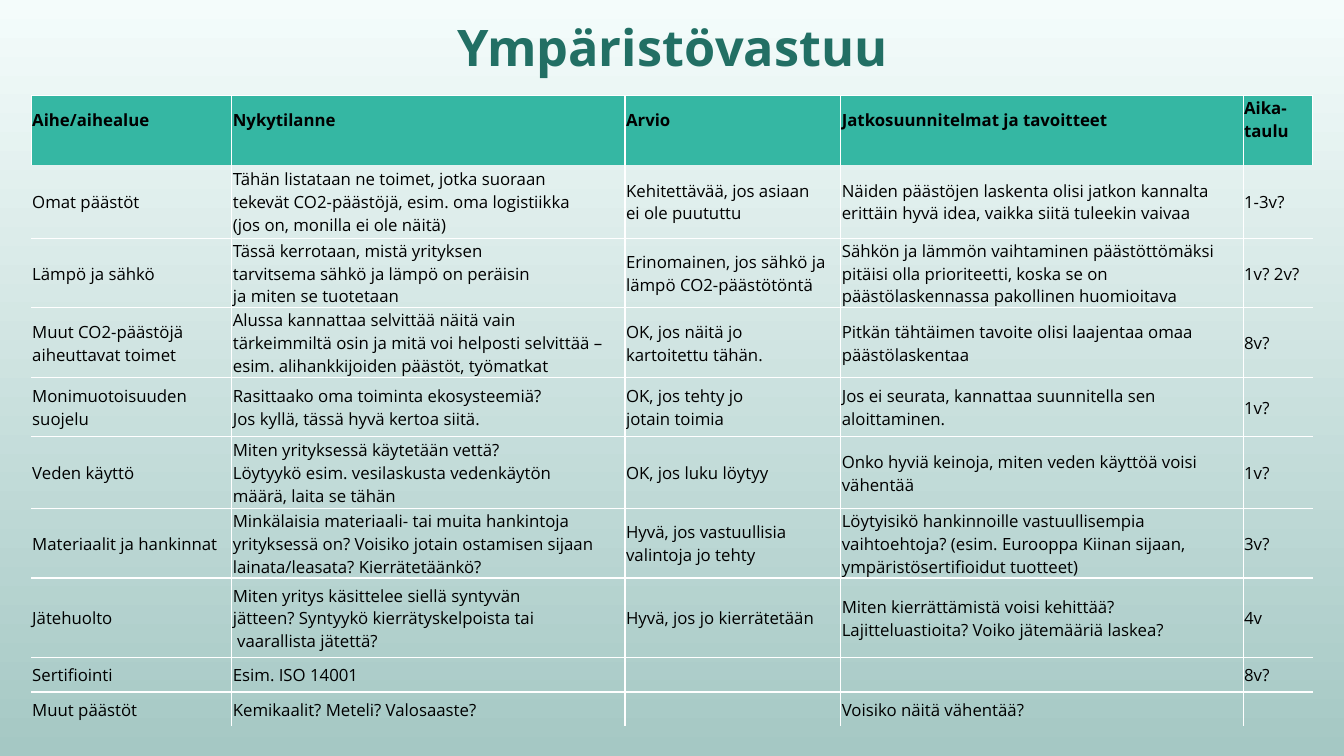
from lxml.etree import SubElement
from pptx import Presentation
from pptx.dml.color import RGBColor
from pptx.enum.text import MSO_ANCHOR, PP_ALIGN
from pptx.oxml.ns import qn
from pptx.util import Inches, Pt

PALE = RGBColor(0xF4, 0xFC, 0xFB)
MIST = RGBColor(0xA5, 0xC8, 0xC4)
TEAL = RGBColor(0x35, 0xB7, 0xA3)
DEEP = RGBColor(0x22, 0x6F, 0x64)
BLACK = RGBColor(0, 0, 0)
WHITE = RGBColor(0xFF, 0xFF, 0xFF)
FONT = "Open Sans"

COLS = [1.99, 3.9, 2.14, 3.99, 0.69]
# Height and cell texts of each row; \v breaks a line, \n starts a paragraph
ROWS = [
    (0.68, ["Aihe/aihealue", "Nykytilanne", "Arvio",
            "Jatkosuunnitelmat ja tavoitteet", "Aika-\vtaulu"]),
    (0.73, ["Omat päästöt",
            "Tähän listataan ne toimet, jotka suoraan \vtekevät CO2-päästöjä, "
            "esim. oma logistiikka \v(jos on, monilla ei ole näitä)",
            "Kehitettävää, jos asiaan \vei ole puututtu",
            "Näiden päästöjen laskenta olisi jatkon kannalta "
            "erittäin hyvä idea, vaikka siitä tuleekin vaivaa",
            "1-3v?"]),
    (0.69, ["Lämpö ja sähkö",
            "Tässä kerrotaan, mistä yrityksen \vtarvitsema sähkö ja lämpö "
            "on peräisin \vja miten se tuotetaan",
            "Erinomainen, jos sähkö ja lämpö CO2-päästötöntä",
            "Sähkön ja lämmön vaihtaminen päästöttömäksi pitäisi olla "
            "prioriteetti, koska se on päästölaskennassa pakollinen huomioitava",
            "1v? 2v?"]),
    (0.69, ["Muut CO2-päästöjä aiheuttavat toimet",
            "Alussa kannattaa selvittää näitä vain \vtärkeimmiltä osin ja mitä "
            "voi helposti selvittää – esim. alihankkijoiden päästöt, työmatkat",
            "OK, jos näitä jo \vkartoitettu tähän.",
            "Pitkän tähtäimen tavoite olisi laajentaa omaa päästölaskentaa",
            "8v?"]),
    (0.59, ["Monimuotoisuuden\nsuojelu",
            "Rasittaako oma toiminta ekosysteemiä? \v"
            "Jos kyllä, tässä hyvä kertoa siitä.",
            "OK, jos tehty jo \vjotain toimia",
            "Jos ei seurata, kannattaa suunnitella sen aloittaminen.",
            "1v?"]),
    (0.71, ["Veden käyttö",
            "Miten yrityksessä käytetään vettä? \vLöytyykö esim. vesilaskusta "
            "vedenkäytön \vmäärä, laita se tähän",
            "OK, jos luku löytyy",
            "Onko hyviä keinoja, miten veden käyttöä voisi vähentää",
            "1v?"]),
    (0.69, ["Materiaalit ja hankinnat",
            "Minkälaisia materiaali- tai muita hankintoja yrityksessä on? "
            "Voisiko jotain ostamisen sijaan lainata/leasata? Kierrätetäänkö?",
            "Hyvä, jos vastuullisia valintoja jo tehty",
            "Löytyisikö hankinnoille vastuullisempia vaihtoehtoja? "
            "(esim. Eurooppa Kiinan sijaan, ympäristösertifioidut tuotteet)",
            "3v?"]),
    (0.79, ["Jätehuolto",
            "Miten yritys käsittelee siellä syntyvän\njätteen? "
            "Syntyykö kierrätyskelpoista tai\v vaarallista jätettä?",
            "Hyvä, jos jo kierrätetään",
            "Miten kierrättämistä voisi kehittää? "
            "Lajitteluastioita? Voiko jätemääriä laskea?",
            "4v"]),
    (0.34, ["Sertifiointi", "Esim. ISO 14001", "", "", "8v?"]),
    (0.34, ["Muut päästöt", "Kemikaalit? Meteli? Valosaaste?", "",
            "Voisiko näitä vähentää?", ""]),
]


def style(font, size, color, bold):
    values = {"name": FONT, "size": Pt(size), "bold": bold}
    for key, value in values.items():
        setattr(font, key, value)
    font.color.rgb = color


def border(cell, sides):
    """Draw the given sides in white and clear the others."""
    props = cell._tc.get_or_add_tcPr()
    for place, side in enumerate("LRTB"):
        line = SubElement(props, qn(f"a:ln{side}"), w=str(Pt(1)))
        if side in sides:
            fill = SubElement(line, qn("a:solidFill"))
            SubElement(fill, qn("a:srgbClr"), val=str(WHITE))
        else:
            SubElement(line, qn("a:noFill"))
        props.insert(place, line)


deck = Presentation()
deck.slide_width, deck.slide_height = Inches(13.33), Inches(7.5)
slide = deck.slides.add_slide(deck.slide_layouts[5])

# Background running from pale at the top to mist at the bottom
back = slide.background.fill
back.gradient()
back.gradient_angle = 270
for stop, color in zip(back.gradient_stops, (PALE, MIST)):
    stop.color.rgb = color

# Title
title = slide.shapes.title
box = {"left": 1.67, "top": 0.14, "width": 10, "height": 0.68}
for key, value in box.items():
    setattr(title, key, Inches(value))
title.text_frame.text = "Ympäristövastuu"
title.text_frame.vertical_anchor = MSO_ANCHOR.BOTTOM
head = title.text_frame.paragraphs[0]
head.alignment = PP_ALIGN.CENTER
head.line_spacing = 0.9
style(head.runs[0].font, 36, DEEP, True)

# Table
table = slide.shapes.add_table(
    len(ROWS), len(COLS), Inches(0.31), Inches(0.95),
    Inches(sum(COLS)), Inches(sum(height for height, _ in ROWS))).table
table.first_row = table.horz_banding = False
for col, width in zip(table.columns, COLS):
    col.width = Inches(width)

for r, (height, texts) in enumerate(ROWS):
    table.rows[r].height = Inches(height)
    top = r == 0
    for c, text in enumerate(texts):
        cell = table.cell(r, c)
        cell.text = text
        # The header text sits above a free line
        format = {"vertical_anchor": MSO_ANCHOR.MIDDLE,
                  "margin_left": Inches(0.01), "margin_right": Inches(0.01),
                  "margin_top": Inches(0.01),
                  "margin_bottom": Inches(0.22 if top else 0)}
        for key, value in format.items():
            setattr(cell, key, value)
        for para in cell.text_frame.paragraphs:
            style(para.font, 12, BLACK, top)
            for run in para.runs:
                style(run.font, 12, BLACK, top)
        if top:
            cell.fill.solid()
            cell.fill.fore_color.rgb = TEAL
            sides = "LRT"
        else:
            cell.fill.background()
            sides = (("L" if c > 0 else "")
                     + ("R" if c < len(COLS) - 1 else "")
                     + ("T" if r > 1 else "")
                     + ("B" if r < len(ROWS) - 1 else ""))
        border(cell, sides)

deck.save("out.pptx")
